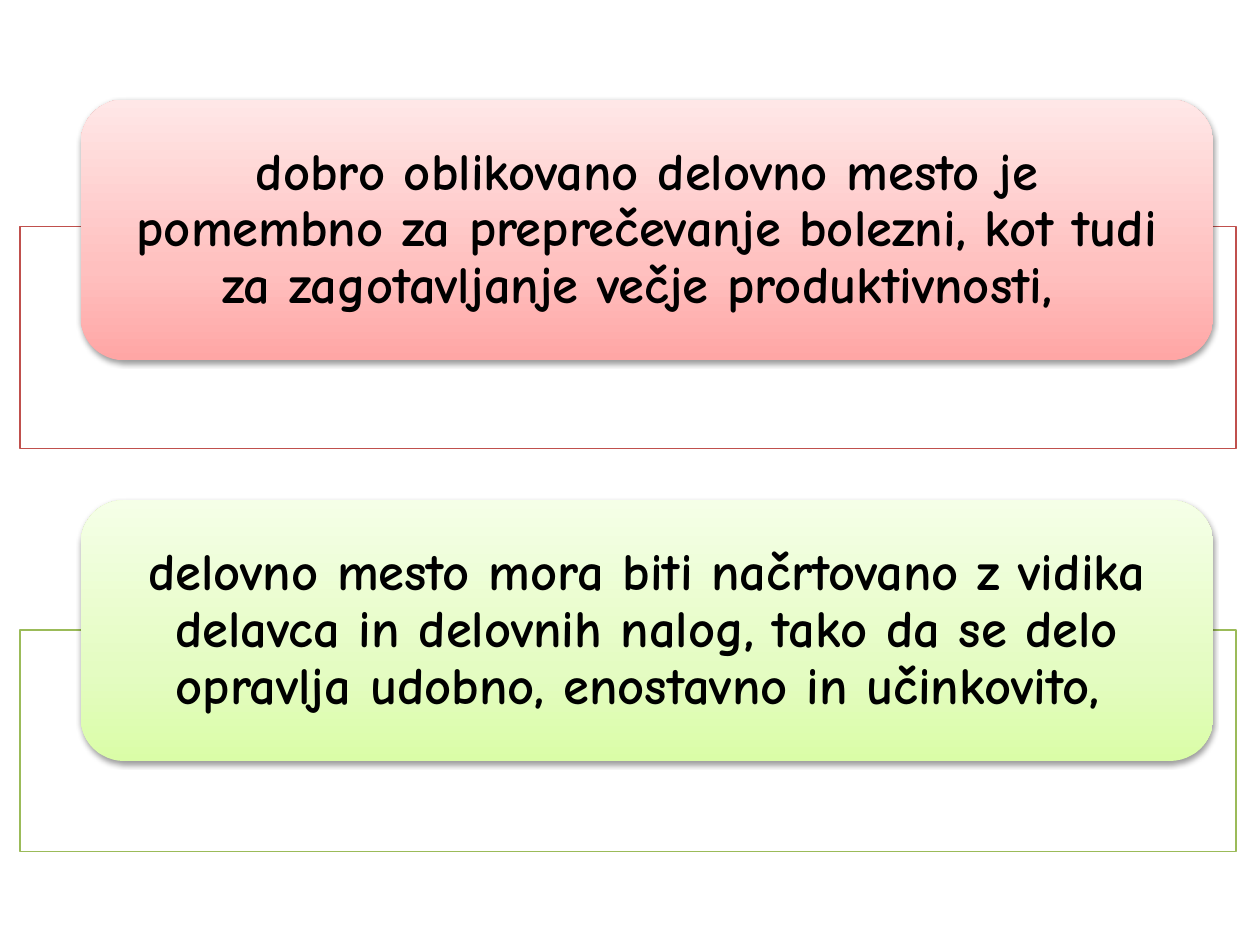
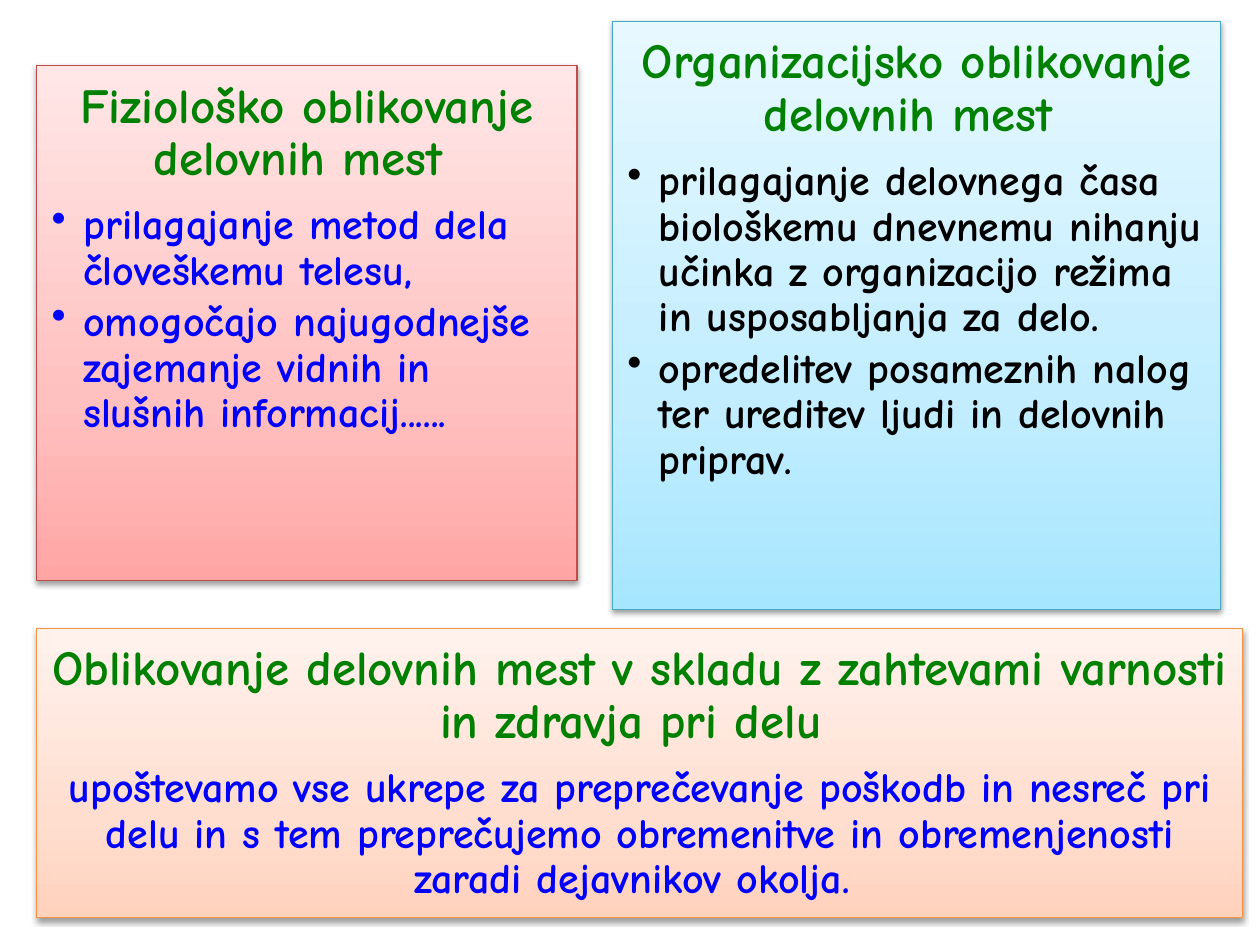
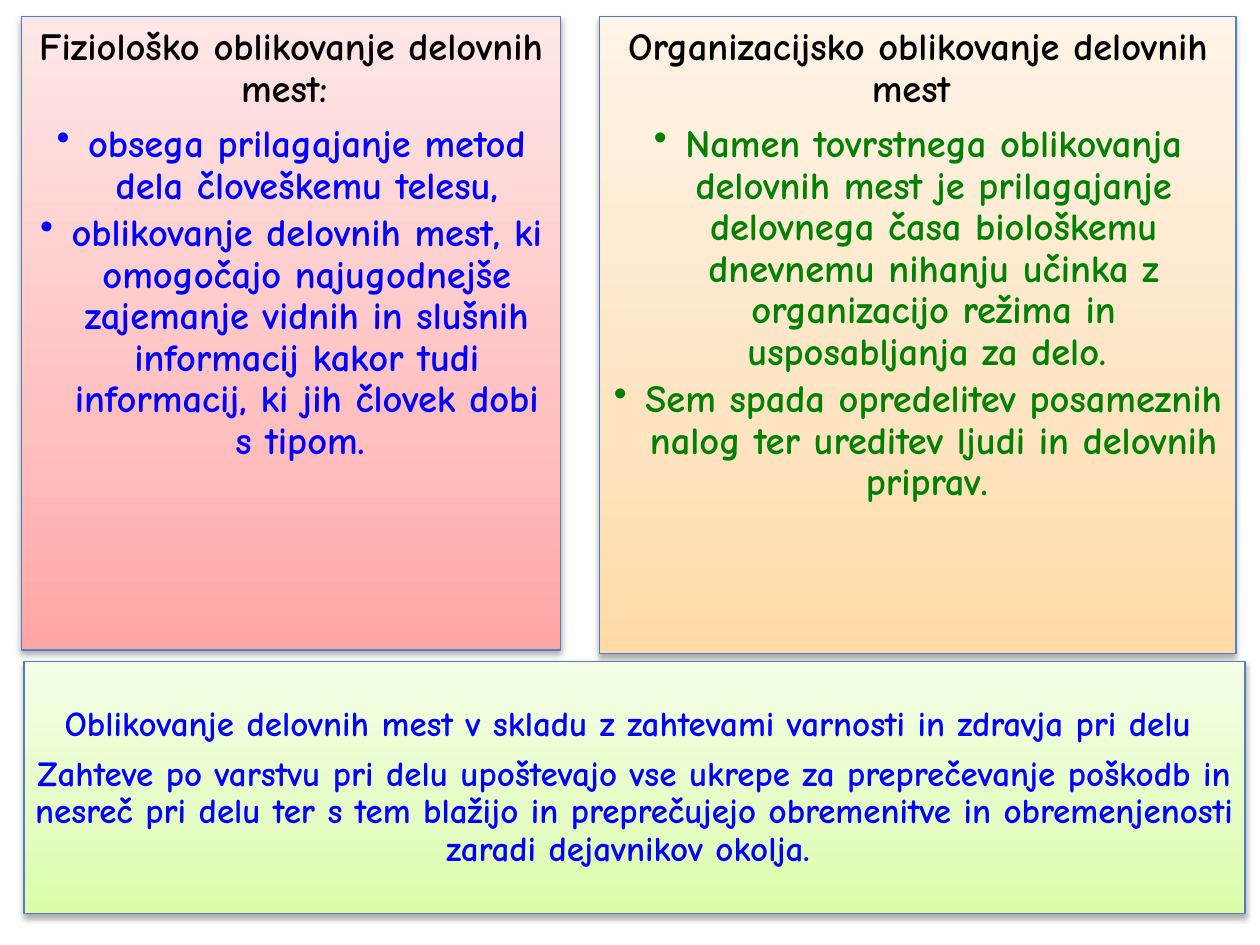
from copy import deepcopy

from lxml.etree import SubElement
from pptx import Presentation
from pptx.dml.color import RGBColor
from pptx.enum.shapes import MSO_SHAPE
from pptx.enum.text import MSO_ANCHOR, PP_ALIGN
from pptx.oxml.ns import qn
from pptx.util import Inches, Pt

FONT = "Comic Neue"
COLOURS = {
    "white": "FFFFFF",
    "black": "000000",
    "blue": "0000FF",
    "green": "008000",
    "red line": "C0504D",
    "lime line": "9BBB59",
    "rose line": "BF4C48",
    "aqua line": "46AAC5",
    "orange line": "F69240",
    "steel line": "4F81BD",
}
GRADIENTS = {
    "rose": ("FFA6A5", "FFC0BF", "FFE7E7"),
    "lime": ("DAFDA7", "E4FCC2", "F5FFE7"),
    "aqua": ("A7E6FF", "C1EDFF", "E7F8FF"),
    "peach": ("FFD2BD", "FFDED0", "FFF2ED"),
    "amber": ("FFDAA5", "FEE4C0", "FFF4E7"),
}
STOPS = (0, 0.35, 1)
SOFT_SHADOW = (38, 3.15, 1.57)
DEEP_SHADOW = (32, 3.5, 2.2)


def colour(name):
    return RGBColor.from_string(COLOURS[name])


class Deck:
    def __init__(self):
        self.presentation = Presentation()
        self.presentation.slide_width = Inches(10)
        self.presentation.slide_height = Inches(7.5)
        self.slide = None

    def new_slide(self):
        blank = self.presentation.slide_layouts[6]
        self.slide = self.presentation.slides.add_slide(blank)

    def outline(self, shape, line):
        if line is None:
            shape.line.fill.background()
        else:
            shape.line.color.rgb = colour(line)
            shape.line.width = Pt(0.75)

    def frame(self, place, line):
        frame = self.slide.shapes.add_shape(MSO_SHAPE.RECTANGLE, *map(Inches, place))
        frame.shadow.inherit = False
        frame.fill.solid()
        frame.fill.fore_color.rgb = colour("white")
        self.outline(frame, line)

    def gradient(self, shape, name):
        shape.fill.gradient()
        shape.fill.gradient_angle = 90
        first = next(shape._element.spPr.iter(qn("a:gs")))
        first.addnext(deepcopy(first))
        for stop, position, value in zip(shape.fill.gradient_stops, STOPS, GRADIENTS[name]):
            stop.position = position
            stop.color.rgb = RGBColor.from_string(value)

    def shadow(self, shape, style):
        opacity, blur, distance = style
        shape.shadow.inherit = False
        effects = shape._element.spPr.find(qn("a:effectLst"))
        outer = SubElement(effects, qn("a:outerShdw"), blurRad=str(Pt(blur)),
                           dist=str(Pt(distance)), dir="5400000", rotWithShape="0")
        black = SubElement(outer, qn("a:srgbClr"), val=COLOURS["black"])
        SubElement(black, qn("a:alpha"), val=str(opacity * 1000))

    def panel(self, place, gradient, line, shadow, insets,
              kind=MSO_SHAPE.RECTANGLE, anchor=MSO_ANCHOR.MIDDLE):
        panel = self.slide.shapes.add_shape(kind, *map(Inches, place))
        self.gradient(panel, gradient)
        self.outline(panel, line)
        self.shadow(panel, shadow)
        body = panel.text_frame
        body.word_wrap = True
        body.vertical_anchor = anchor
        body.margin_left = body.margin_right = Inches(insets[0])
        body.margin_top = body.margin_bottom = Inches(insets[1])
        return body

    def paragraph(self, body, text, size, ink, bullet=False, align=PP_ALIGN.CENTER):
        paragraph = body.paragraphs[0]
        if paragraph.runs:
            paragraph = body.add_paragraph()
        paragraph.alignment = align
        paragraph.line_spacing = 0.9
        properties = paragraph._p.get_or_add_pPr()
        after = SubElement(properties, qn("a:spcAft"))
        SubElement(after, qn("a:spcPct"), val="15000" if bullet else "35000")
        if bullet:
            paragraph.level = 1
            properties.set("marL", str(Inches(0.25)))
            properties.set("indent", str(Inches(-0.25)))
            SubElement(properties, qn("a:buChar"), char="•")
        run = paragraph.add_run()
        run.text = text
        run.font.name = FONT
        run.font.size = Pt(size)
        run.font.bold = True
        run.font.color.rgb = colour(ink)

    def card(self, frame_top, card_top, gradient, line, text):
        self.frame((0.16, frame_top, 9.65, 1.76), line)
        body = self.panel((0.64, card_top, 8.99, 2.07), gradient, None, SOFT_SHADOW,
                          (0.26, 0), MSO_SHAPE.ROUNDED_RECTANGLE)
        self.paragraph(body, text, 30, "black")

    def topic(self, place, gradient, line, shadow, inset, heading, points, sizes, inks, align):
        body = self.panel(place, gradient, line, shadow, (inset, inset),
                          anchor=MSO_ANCHOR.TOP)
        self.paragraph(body, heading, sizes[0], inks[0])
        for point in points:
            self.paragraph(body, point, sizes[1], inks[1], True, align)

    def summary(self, place, gradient, line, shadow, inset, heading, text, sizes, inks):
        body = self.panel(place, gradient, line, shadow, (inset, inset))
        for words, size, ink in zip((heading, text), sizes, inks):
            self.paragraph(body, words, size, ink)


PHYSIOLOGICAL = "Fiziološko oblikovanje delovnih mest"
ORGANISATIONAL = "Organizacijsko oblikovanje delovnih mest "
SAFETY = "Oblikovanje delovnih mest v skladu z zahtevami varnosti in zdravja pri delu "


def main():
    deck = Deck()

    deck.new_slide()
    deck.card(1.8, 0.79, "rose", "red line",
              "dobro oblikovano delovno mesto je pomembno za preprečevanje bolezni, "
              "kot tudi za zagotavljanje večje produktivnosti, ")
    deck.card(5, 3.97, "lime", "lime line",
              "delovno mesto mora biti načrtovano z vidika delavca in delovnih nalog, "
              "tako da se delo opravlja udobno, enostavno in učinkovito, ")

    deck.new_slide()
    sizes = (28, 24)
    deck.topic((0.29, 0.52, 4.29, 4.09), "rose", "rose line", SOFT_SHADOW, 0.12,
               PHYSIOLOGICAL + " ",
               ("prilagajanje metod dela človeškemu telesu,",
                "omogočajo najugodnejše zajemanje vidnih in slušnih informacij......"),
               sizes, ("green", "blue"), PP_ALIGN.LEFT)
    deck.topic((4.86, 0.17, 4.83, 4.67), "aqua", "aqua line", SOFT_SHADOW, 0.12,
               ORGANISATIONAL,
               ("prilagajanje delovnega časa biološkemu dnevnemu nihanju učinka "
                "z organizacijo režima in usposabljanja za delo.",
                "opredelitev posameznih nalog ter ureditev ljudi in delovnih priprav."),
               sizes, ("green", "black"), PP_ALIGN.LEFT)
    deck.summary((0.29, 4.99, 9.57, 2.29), "peach", "orange line", SOFT_SHADOW, 0.12,
                 SAFETY,
                 "upoštevamo vse ukrepe za preprečevanje poškodb in nesreč pri delu in s tem "
                 "preprečujemo obremenitve in obremenjenosti zaradi dejavnikov okolja. ",
                 sizes, ("green", "blue"))

    deck.new_slide()
    sizes = (22, 22)
    deck.topic((0.17, 0.13, 4.28, 5.03), "rose", "steel line", DEEP_SHADOW, 0.09,
               PHYSIOLOGICAL + ": ",
               ("obsega prilagajanje metod dela človeškemu telesu,",
                "oblikovanje delovnih mest, ki omogočajo najugodnejše zajemanje vidnih in "
                "slušnih informacij kakor tudi informacij, ki jih človek dobi s tipom. "),
               sizes, ("black", "blue"), PP_ALIGN.CENTER)
    deck.topic((4.76, 0.13, 5.05, 5.06), "amber", "steel line", DEEP_SHADOW, 0.09,
               ORGANISATIONAL,
               ("Namen tovrstnega oblikovanja delovnih mest je prilagajanje delovnega časa "
                "biološkemu dnevnemu nihanju učinka z organizacijo režima in "
                "usposabljanja za delo. ",
                "Sem spada opredelitev posameznih nalog ter ureditev ljudi in "
                "delovnih priprav. "),
               sizes, ("black", "green"), PP_ALIGN.CENTER)
    deck.summary((0.19, 5.25, 9.69, 2), "lime", "steel line", DEEP_SHADOW, 0.08,
                 SAFETY,
                 "Zahteve po varstvu pri delu upoštevajo vse ukrepe za preprečevanje poškodb "
                 "in nesreč pri delu ter s tem blažijo in preprečujejo obremenitve in "
                 "obremenjenosti zaradi dejavnikov okolja. ",
                 (20, 20), ("blue", "blue"))

    deck.presentation.save("out.pptx")


if __name__ == "__main__":
    main()
